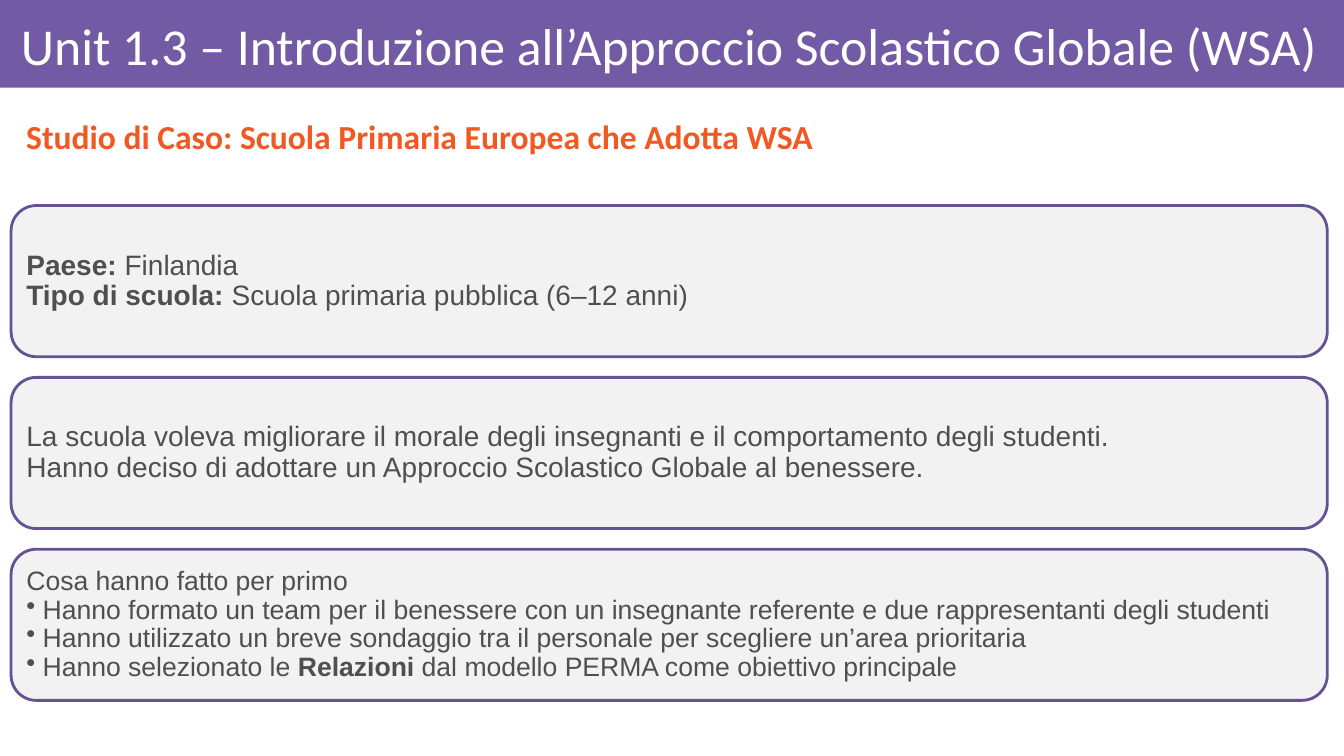
from dataclasses import dataclass

from lxml import etree
from pptx import Presentation
from pptx.dml.color import RGBColor
from pptx.enum.shapes import MSO_SHAPE
from pptx.enum.text import MSO_ANCHOR, PP_ALIGN
from pptx.oxml.ns import qn
from pptx.util import Cm, Pt

RECT = MSO_SHAPE.RECTANGLE
ROUNDED = MSO_SHAPE.ROUNDED_RECTANGLE
MIDDLE = MSO_ANCHOR.MIDDLE
LEFT = PP_ALIGN.LEFT

SLIDE_W, SLIDE_H = 33.87, 19.05
BAND_H = 2.21
CARD_X, CARD_Y, CARD_W, CARD_H = 0.28, 5.18, 33.17, 3.81
CARD_PITCH = 4.33
BULLET_INDENT = 0.41


@dataclass(frozen=True)
class Theme:
    band: str = "735AA5"
    border: str = "675195"
    card: str = "F2F2F2"
    title: str = "FFFFFF"
    accent: str = "F05A22"
    text: str = "4F4F50"
    heading_font: str = "Calibri"
    body_font: str = "Arial"
    title_size: int = 37
    subtitle_size: int = 24
    card_size: int = 20
    list_size: int = 19


def add_bullet(p):
    pPr = p._p.get_or_add_pPr()
    pPr.set("marL", str(Cm(BULLET_INDENT)))
    pPr.set("indent", str(-Cm(BULLET_INDENT)))
    etree.SubElement(pPr, qn("a:buChar")).set("char", "•")


def write(tf, lines, *, font, size, color, bold=False, insets=(0.2, 0.2, 0.2, 0.2)):
    """Fill a frame; **marks** set bold and a leading "• " makes a bullet."""
    tf.word_wrap = True
    tf.vertical_anchor = MIDDLE
    tf.margin_left, tf.margin_top, tf.margin_right, tf.margin_bottom = map(Cm, insets)
    for i, line in enumerate(lines):
        p = tf.add_paragraph() if i else tf.paragraphs[0]
        p.alignment = LEFT
        p.line_spacing = 0.9
        if line.startswith("• "):
            add_bullet(p)
        for j, part in enumerate(line.removeprefix("• ").split("**")):
            if not part:
                continue
            r = p.add_run()
            r.text = part
            r.font.name = font
            r.font.size = Pt(size)
            r.font.bold = bold or j % 2 == 1
            r.font.color.rgb = RGBColor.from_string(color)


class SlideBuilder:
    def __init__(self, slide, theme):
        self.s = slide
        self.theme = theme

    def box(self, kind, x, y, w, h, fill, border=None):
        sp = self.s.shapes.add_shape(kind, Cm(x), Cm(y), Cm(w), Cm(h))
        sp.shadow.inherit = False
        sp.fill.solid()
        sp.fill.fore_color.rgb = RGBColor.from_string(fill)
        if border:
            sp.line.color.rgb = RGBColor.from_string(border)
            sp.line.width = Pt(2)
        else:
            sp.line.fill.background()
        return sp

    def text(self, x, y, w, h, line, **style):
        sp = self.s.shapes.add_textbox(Cm(x), Cm(y), Cm(w), Cm(h))
        write(sp.text_frame, [line], font=self.theme.heading_font, **style)

    def title(self, line):
        t = self.theme
        self.box(RECT, 0, 0, SLIDE_W, BAND_H, t.band)
        self.text(0.28, 0.23, 33.17, 1.98, line, size=t.title_size,
                  color=t.title, insets=(0.25, 0.15, 0.15, 0.15))

    def subtitle(self, line):
        t = self.theme
        self.text(0.41, 2.74, 32.5, 1.52, line, size=t.subtitle_size,
                  color=t.accent, bold=True, insets=(0.25, 0.13, 0.25, 0.13))

    def card(self, row, lines, size):
        t = self.theme
        sp = self.box(ROUNDED, CARD_X, CARD_Y + row * CARD_PITCH, CARD_W, CARD_H,
                      t.card, t.border)
        write(sp.text_frame, lines, font=t.body_font, size=size, color=t.text)


def main():
    prs = Presentation()
    prs.slide_width, prs.slide_height = Cm(SLIDE_W), Cm(SLIDE_H)
    theme = Theme()
    page = SlideBuilder(prs.slides.add_slide(prs.slide_layouts[6]), theme)

    page.title("Unit 1.3 – Introduzione all’Approccio Scolastico Globale (WSA)")
    page.subtitle("Studio di Caso: Scuola Primaria Europea che Adotta WSA")
    cards = [
        (["**Paese: **Finlandia",
          "**Tipo di scuola: **Scuola primaria pubblica (6–12 anni)"], theme.card_size),
        (["La scuola voleva migliorare il morale degli insegnanti e il comportamento degli studenti.",
          "Hanno deciso di adottare un Approccio Scolastico Globale al benessere."], theme.card_size),
        (["Cosa hanno fatto per primo",
          "• Hanno formato un team per il benessere con un insegnante referente e due rappresentanti degli studenti",
          "• Hanno utilizzato un breve sondaggio tra il personale per scegliere un’area prioritaria",
          "• Hanno selezionato le **Relazioni** dal modello PERMA come obiettivo principale"], theme.list_size),
    ]
    for row, (lines, size) in enumerate(cards):
        page.card(row, lines, size)

    prs.save("out.pptx")


if __name__ == "__main__":
    main()
